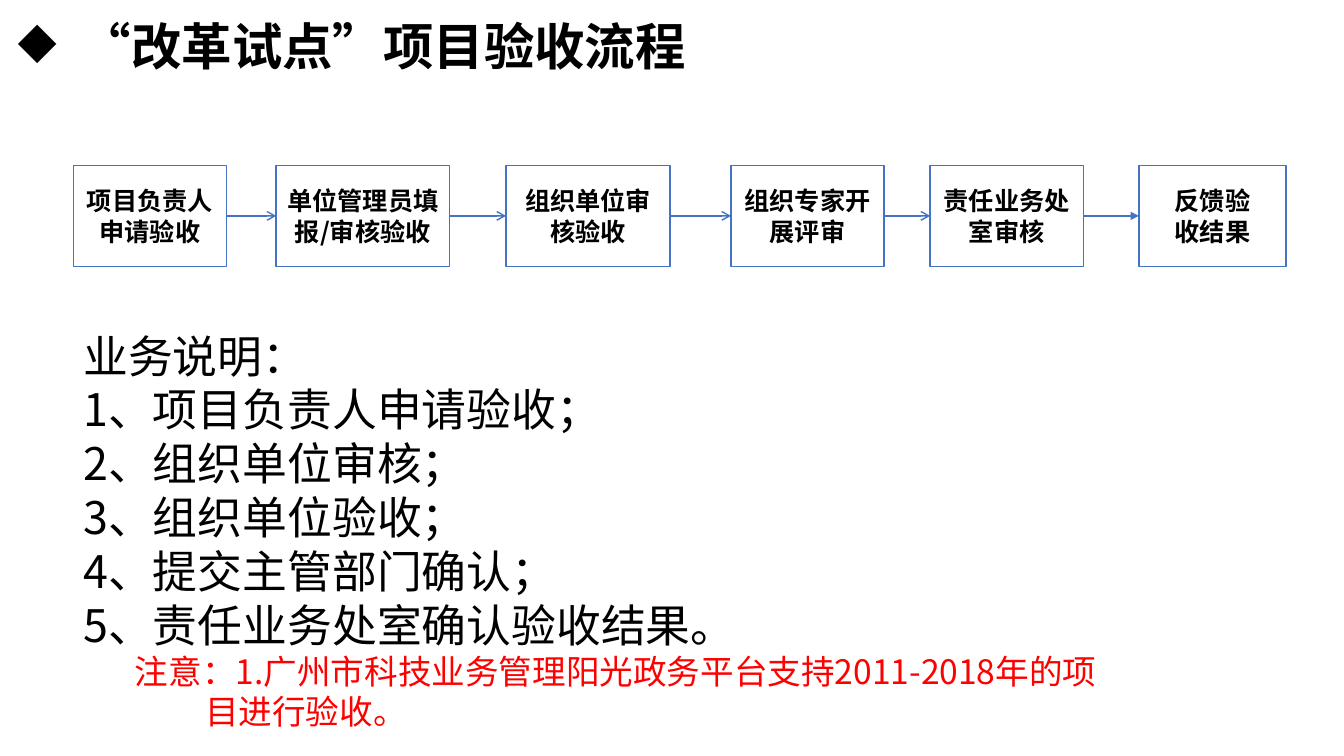
import itertools
from dataclasses import dataclass

import lxml.etree
import pptx
import pptx.dml.color
import pptx.enum.dml
import pptx.enum.shapes
import pptx.enum.text
import pptx.oxml.ns
import pptx.util

Cm = pptx.util.Cm
Pt = pptx.util.Pt
RGBColor = pptx.dml.color.RGBColor
qn = pptx.oxml.ns.qn

BLACK = RGBColor(0x00, 0x00, 0x00)
WHITE = RGBColor(0xFF, 0xFF, 0xFF)
BLUE = RGBColor(0x44, 0x72, 0xC4)
RED = RGBColor(0xFF, 0x00, 0x00)
FONT = "Noto Sans CJK SC"
TOP, HEIGHT = 4.17, 2.54


@dataclass
class Step:
    left: float
    width: float
    text: str
    arrow: str = "arrow"  # head of the arrow that leads to this step


STEPS = [
    Step(1.85, 3.86, "项目负责人申请验收"),
    Step(6.96, 4.37, "单位管理员填报/审核验收"),
    Step(12.75, 4.14, "组织单位审核验收"),
    Step(18.42, 3.86, "组织专家开展评审"),
    Step(23.44, 3.86, "责任业务处\n室审核"),
    Step(28.7, 3.71, "反馈验\n收结果", "triangle"),
]
TITLE = "“改革试点”项目验收流程"
NOTES = [
    "业务说明：",
    "1、项目负责人申请验收；",
    "2、组织单位审核；",
    "3、组织单位验收；",
    "4、提交主管部门确认；",
    "5、责任业务处室确认验收结果。",
]
ALERT = "注意：1.广州市科技业务管理阳光政务平台支持2011-2018年的项\v目进行验收。"


def style(para, size: float, color: RGBColor = BLACK, bold: bool = False) -> None:
    for run in para.runs:
        run.font.name = FONT
        run.font.size = Pt(size)
        run.font.bold = bold
        run.font.color.rgb = color
        east = lxml.etree.SubElement(run.font._element, qn("a:ea"))
        east.set("typeface", FONT)


def hang(para, left: float, first: float) -> None:
    props = para._p.get_or_add_pPr()
    props.set("marL", str(Cm(left)))
    props.set("indent", str(Cm(first)))


def add_text(slide, left: float, top: float, width: float, height: float, wrap: bool):
    box = slide.shapes.add_textbox(Cm(left), Cm(top), Cm(width), Cm(height))
    box.text_frame.word_wrap = wrap
    return box.text_frame


def add_step(slide, step: Step):
    box = slide.shapes.add_shape(
        pptx.enum.shapes.MSO_SHAPE.RECTANGLE,
        Cm(step.left), Cm(TOP), Cm(step.width), Cm(HEIGHT))
    box.shadow.inherit = False
    box.fill.solid()
    box.fill.fore_color.rgb = WHITE
    box.line.color.rgb = BLUE
    box.line.width = Pt(1)
    frame = box.text_frame
    frame.word_wrap = True
    frame.vertical_anchor = pptx.enum.text.MSO_ANCHOR.MIDDLE
    frame.text = step.text
    for para in frame.paragraphs:
        para.alignment = pptx.enum.text.PP_ALIGN.CENTER
        style(para, 18, bold=True)
    return box


def add_arrow(slide, start, end, head: str) -> None:
    line = slide.shapes.add_connector(
        pptx.enum.shapes.MSO_CONNECTOR.STRAIGHT, 0, 0, 0, 0)
    line.begin_connect(start, 3)
    line.end_connect(end, 1)
    line.line.color.rgb = BLUE
    line.line.width = Pt(1)
    tail = lxml.etree.SubElement(line.line._get_or_add_ln(), qn("a:tailEnd"))
    tail.set("type", head)
    lxml.etree.SubElement(line._element.spPr, qn("a:effectLst"))


def main() -> None:
    deck = pptx.Presentation()
    deck.slide_width, deck.slide_height = Cm(33.87), Cm(19.05)
    slide = deck.slides.add_slide(deck.slide_layouts[6])

    # Title with a diamond bullet
    frame = add_text(slide, 0.2, 0.25, 17.4, 1.8, wrap=False)
    frame.text = TITLE
    title = frame.paragraphs[0]
    hang(title, 1.59, -1.59)
    mark = lxml.etree.SubElement(title._p.get_or_add_pPr(), qn("a:buChar"))
    mark.set("char", "◆")
    style(title, 36, bold=True)

    # Flow of steps
    boxes = [add_step(slide, step) for step in STEPS]
    for (start, end), step in zip(itertools.pairwise(boxes), STEPS[1:]):
        add_arrow(slide, start, end, step.arrow)

    # Notes and the red alert
    frame = add_text(slide, 1.85, 8.15, 31.32, 10.85, wrap=True)
    frame.text = "\n".join(NOTES)
    for para in frame.paragraphs:
        style(para, 32)
    alert = frame.add_paragraph()
    alert.text = ALERT
    hang(alert, 3.07, -1.77)
    style(alert, 24, RED)

    deck.save("out.pptx")


if __name__ == "__main__":
    main()
